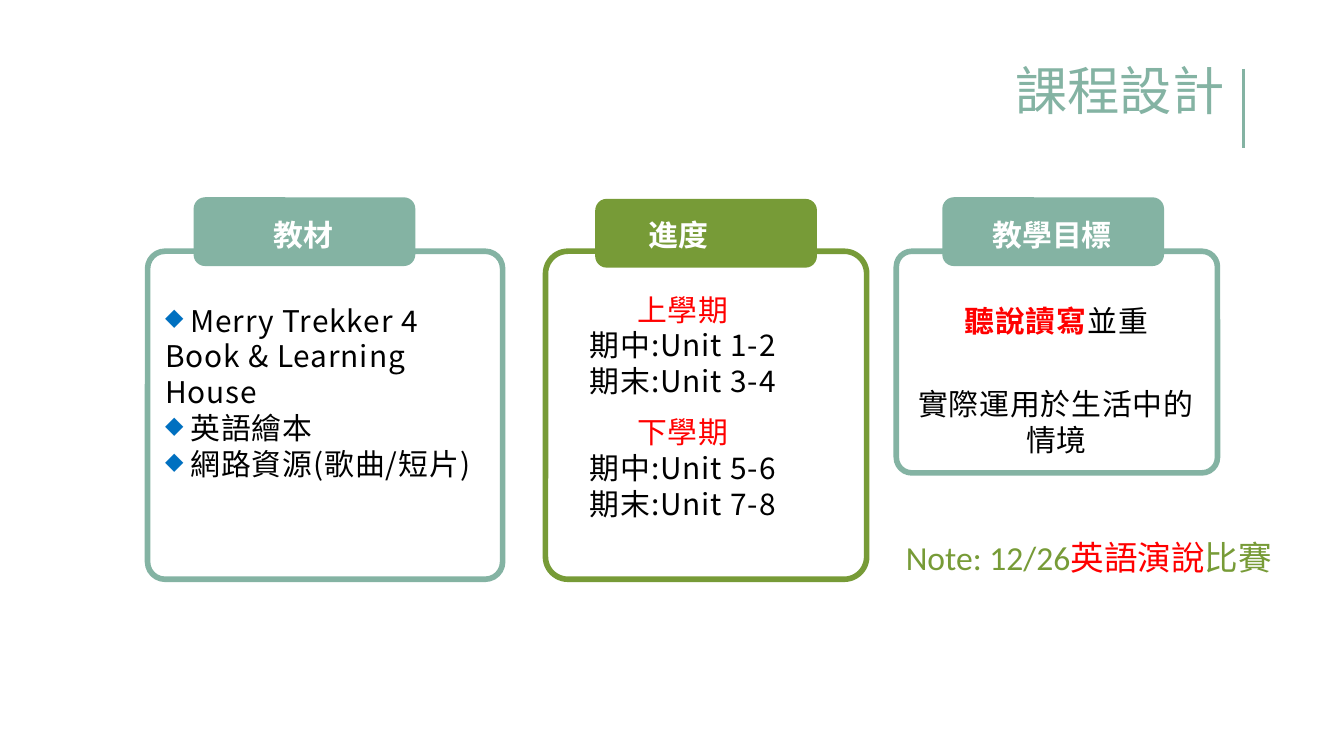
from lxml import etree
from pptx import Presentation, util as u
from pptx.dml.color import RGBColor
from pptx.enum import shapes, text
from pptx.oxml.ns import qn

HUES = {"sage": "84B3A3", "leaf": "779B37", "red": "FF0000",
        "ink": "000000", "white": "FFFFFF", "blue": "0070C0"}
SANS = "Noto Sans CJK SC"
MID = text.MSO_ANCHOR.MIDDLE
LEFT, MIDST, RIGHT = text.PP_ALIGN.LEFT, text.PP_ALIGN.CENTER, text.PP_ALIGN.RIGHT


def hue(name):
    return RGBColor.from_string(HUES[name])


def place(at):
    return [u.Cm(n) for n in at]


def put(item, form):
    for key, val in form.items():
        setattr(item, key, val)


def add(node, tag, **attrs):
    return etree.SubElement(node, qn(tag), attrs)


class Deck:
    def __init__(self):
        self.show = Presentation()
        put(self.show, {"slide_width": u.Cm(25.4), "slide_height": u.Cm(14.29)})
        self.slide = self.show.slides.add_slide(self.show.slide_layouts[5])
        self.items = self.slide.shapes

    def fill_text(self, frame, lines, align=LEFT, size=16, font=SANS, bold=False,
                  space=0, anchor=text.MSO_ANCHOR.TOP, lead=None, tab=False):
        put(frame, {"word_wrap": True, "vertical_anchor": anchor,
                    "auto_size": text.MSO_AUTO_SIZE.NONE})
        for i, (mark, runs) in enumerate(lines):
            par = frame.paragraphs[0] if i == 0 else frame.add_paragraph()
            put(par, {"alignment": align, "line_spacing": lead})
            if tab:
                self.indent(par, mark)
            for words, tone, *style in runs:
                run = par.add_run()
                run.text = words
                put(run.font, {"size": u.Pt(size), "name": font,
                               "bold": bold or "bold" in style})
                run.font.color.rgb = hue(tone)
                props = run._r.get_or_add_rPr()
                add(props, "a:ea", typeface=SANS)
                if space:
                    props.set("spc", str(space))

    def indent(self, par, mark):
        par.level = 1
        props = par._p.get_or_add_pPr()
        hang = u.Cm(0.48) if mark else 0
        props.set("marL", str(hang))
        props.set("indent", str(-hang))
        if mark:
            add(add(props, "a:buClr"), "a:srgbClr", val=HUES["blue"])
            add(props, "a:buSzPct", val="80000")
            add(props, "a:buChar", char=mark)
        else:
            add(props, "a:buNone")
        add(add(props, "a:tabLst"), "a:tab", pos=str(u.Cm(0.38)), algn="l")

    def title(self, at, words, tone):
        head = self.items.title
        put(head, dict(zip(("left", "top", "width", "height"), place(at))))
        self.fill_text(head.text_frame, [("", [(words, tone)])], RIGHT, 28,
                       anchor=MID, lead=0.9)

    def rule(self, ends, tone):
        line = self.items.add_connector(shapes.MSO_CONNECTOR.STRAIGHT, *place(ends))
        line.line.color.rgb = hue(tone)
        line.line.width = u.Pt(1.5)
        add(line._element.spPr, "a:effectLst")

    def box(self, at, fill=None, edge=None, bend=0.1667):
        item = self.items.add_shape(shapes.MSO_SHAPE.ROUNDED_RECTANGLE, *place(at))
        item.shadow.inherit = False
        item.adjustments[0] = bend
        if fill:
            item.fill.solid()
            item.fill.fore_color.rgb = hue(fill)
        else:
            item.fill.background()
        if edge:
            item.line.color.rgb = hue(edge)
            item.line.width = u.Pt(3)
        else:
            item.line.fill.background()
        return item

    def card(self, words, tone, body, tab, label, bend):
        self.box(body, edge=tone, bend=bend)
        self.box(tab, fill=tone)
        self.fill_text(self.box(label).text_frame, [("", [(words, "white")])],
                       MIDST, bold=True, anchor=MID)

    def note(self, at, lines, **form):
        self.fill_text(self.items.add_textbox(*place(at)).text_frame, lines, **form)


def main():
    deck = Deck()
    deck.title((13.69, 1.14, 9.7, 1.27), "課程設計", "sage")
    deck.rule((23.5, 1.3, 23.5, 2.79), "sage")

    cards = [
        ("教材", "sage", 2.79, 6.71, 6.2, 3.66, 3.73, 3.94, 3.58, 0.053),
        ("進度", "leaf", 10.31, 6.07, 6.2, 11.25, 3.76, 10.97, 3.71, 0.07),
        ("教學目標", "sage", 16.94, 6.07, 4.19, 17.81, 3.73, 18.03, 3.71, 0.07),
    ]
    for words, tone, x, wide, high, tab, top, label, span, bend in cards:
        deck.card(words, tone, (x, 4.75, wide, high), (tab, top, 4.19, 1.3),
                  (label, 3.91, span, 1.04), bend)

    body = {"space": 50, "tab": True}
    books = [("◆", "Merry Trekker 4"), ("", "Book & Learning House"),
             ("◆", "英語繪本"), ("◆", "網路資源(歌曲/短片)")]
    deck.note((2.87, 5.59, 6.63, 3.68),
              [(mark, [(words, "ink")]) for mark, words in books], **body)

    body["align"] = MIDST
    for i, term in enumerate(("上學期", "下學期")):
        unit = 4 * i + 1
        deck.note((9.96, 5.38 + 2.32 * i, 5.89, 2.31), [
            ("", [(term, "red")]),
            ("", [(f"期中:Unit {unit}-{unit + 1}", "ink")]),
            ("", [(f"期末:Unit {unit + 2}-{unit + 3}", "ink")])], **body)

    deck.note((17.02, 5.59, 5.89, 0.94),
              [("", [("聽說讀寫", "red", "bold"), ("並重", "ink")])], **body)
    deck.note((17.02, 7.16, 5.89, 1.63),
              [("", [("實際運用於生活中的情境", "ink")])], **body)
    deck.note((16.87, 10.03, 7.52, 1.02),
              [("", [("Note: 12/26", "leaf"), ("英語演說", "red"), ("比賽", "leaf")])],
              size=18, font="Calibri")
    deck.show.save("out.pptx")


if __name__ == "__main__":
    main()
